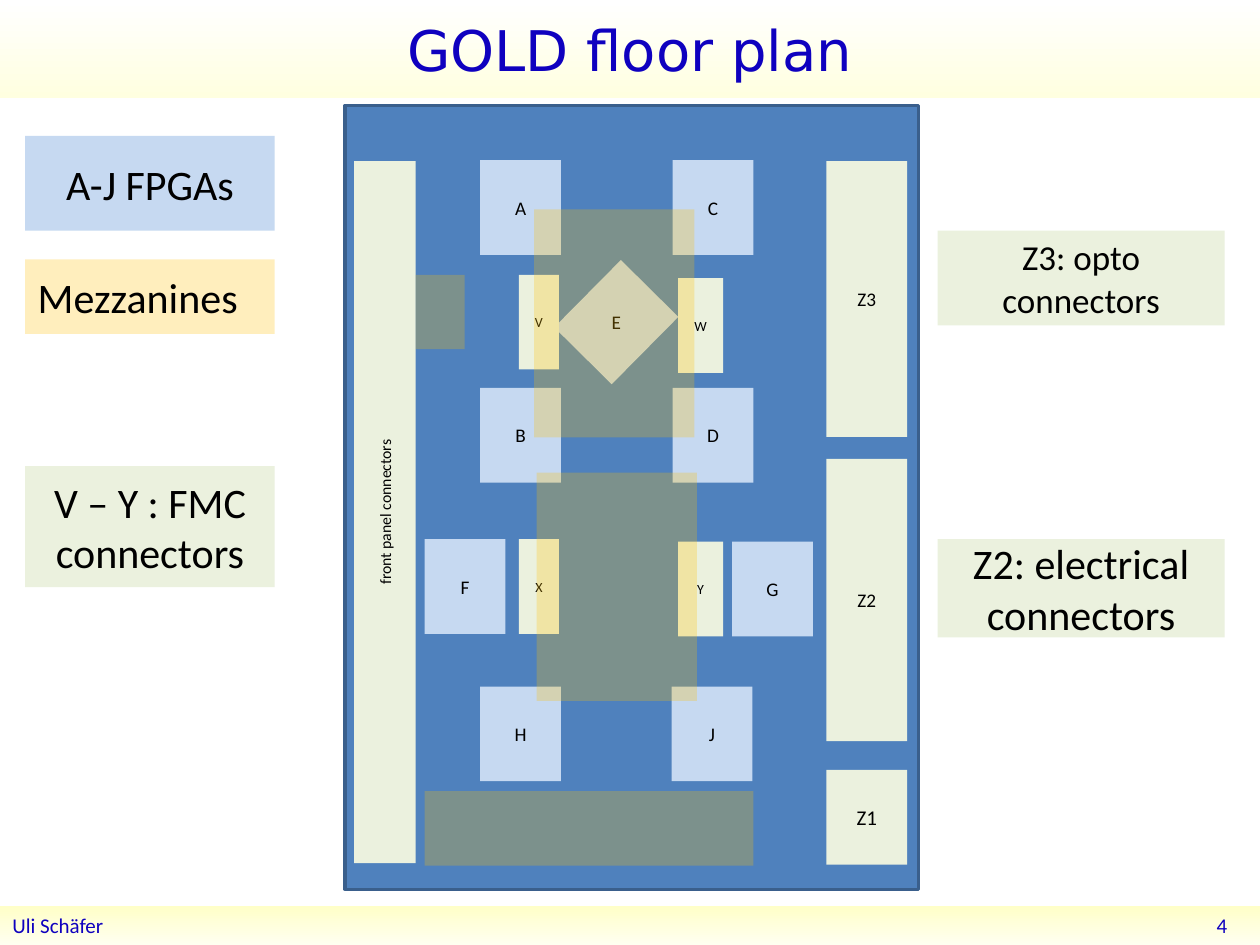
import dataclasses

import pptx
import pptx.dml.color
import pptx.enum.shapes
import pptx.enum.text
import pptx.oxml.ns
import pptx.util
from lxml import etree

Cm = pptx.util.Cm
Pt = pptx.util.Pt
ALIGN = pptx.enum.text.PP_ALIGN
RECTANGLE = pptx.enum.shapes.MSO_SHAPE.RECTANGLE


@dataclasses.dataclass(frozen=True)
class Theme:
    # Colours
    ink: str = "000000"
    heading: str = "0F01BF"
    board: str = "4F81BD"
    board_edge: str = "3A5F8C"
    fpga: str = "C6D9F1"
    connector: str = "EBF1DE"
    mezzanine: str = "FFC000"
    mezzanine_opacity: int = 26
    title_band: tuple = ("FFFFFF", "FFFFE0")
    footer_band: tuple = ("FFFFC8", "FFFFF0")
    # Fonts and sizes in points
    body_font: str = "Calibri"
    title_font: str = "DejaVu Sans"
    title_size: int = 32
    legend_size: int = 24
    small_legend_size: int = 20
    footer_size: int = 12
    part_size: int = 11
    panel_size: int = 9
    socket_size: int = 8


THEME = Theme()
PAGE_WIDTH, PAGE_HEIGHT = 25.4, 19.05
FPGA_WIDTH, PART_HEIGHT = 1.63, 1.91


def rgb(value):
    return pptx.dml.color.RGBColor.from_string(value)


def write(box, text, size, color=THEME.ink, font=THEME.body_font, align=ALIGN.CENTER):
    frame = box.text_frame
    frame.word_wrap = True
    frame.vertical_anchor = pptx.enum.text.MSO_ANCHOR.MIDDLE
    para = frame.paragraphs[0]
    para.text = text
    para.alignment = align
    para.font.size = Pt(size)
    para.font.name = font
    para.font.color.rgb = rgb(color)


def add_block(page, area, fill):
    block = page.shapes.add_shape(RECTANGLE, *map(Cm, area))
    block.shadow.inherit = False
    block.line.fill.background()
    block.fill.solid()
    block.fill.fore_color.rgb = rgb(fill)
    return block


def add_label(page, area, text, size, **style):
    box = page.shapes.add_textbox(*map(Cm, area))
    write(box, text, size, **style)


def add_part(page, area, fill, text, size):
    part = add_block(page, area, fill)
    write(part, text, size)
    return part


def add_mezzanine(page, area):
    block = add_block(page, area, THEME.mezzanine)
    color = block.fill._xPr.find(".//" + pptx.oxml.ns.qn("a:srgbClr"))
    alpha = etree.SubElement(color, pptx.oxml.ns.qn("a:alpha"))
    alpha.set("val", str(THEME.mezzanine_opacity * 1000))
    return block


def add_band(page, area, colors):
    band = add_block(page, area, colors[0])
    band.fill.gradient()
    band.fill.gradient_angle = 270
    for stop, color in zip(band.fill.gradient_stops, colors):
        stop.color.rgb = rgb(color)
    return band


def add_frame(page):
    title = add_band(page, (0, 0, PAGE_WIDTH, 1.98), THEME.title_band)
    write(title, "GOLD floor plan", THEME.title_size, THEME.heading, THEME.title_font)
    footer = add_band(page, (0, 18.26, PAGE_WIDTH, 0.79), THEME.footer_band)
    write(footer, "Uli Schäfer", THEME.footer_size, THEME.heading, align=ALIGN.LEFT)
    add_label(page, (19.63, 18.24, 5.36, 0.81), "4", THEME.footer_size,
              color=THEME.heading, align=ALIGN.RIGHT)


def add_board(page):
    board = add_block(page, (6.96, 2.13, 11.56, 15.8), THEME.board)
    board.line.color.rgb = rgb(THEME.board_edge)
    board.line.width = Pt(2)

    # FPGAs
    for name, left, top in (
        ("A", 9.68, 3.23), ("C", 13.56, 3.23),
        ("B", 9.68, 7.82), ("D", 13.56, 7.82),
        ("F", 8.56, 10.87), ("G", 14.76, 10.92),
        ("H", 9.68, 13.84), ("J", 13.54, 13.84),
    ):
        add_part(page, (left, top, FPGA_WIDTH, PART_HEIGHT), THEME.fpga,
                 name, THEME.part_size)

    # The central FPGA is turned, its letter stays upright
    center = (11.61, 5.54, FPGA_WIDTH, PART_HEIGHT)
    add_block(page, center, THEME.fpga).rotation = 44.7
    add_label(page, center, "E", THEME.part_size)

    # Backplane connectors
    for name, top, height, size in (
        ("Z1", 15.52, PART_HEIGHT, 12),
        ("Z2", 9.25, 5.69, THEME.part_size),
        ("Z3", 3.25, 5.56, THEME.part_size),
    ):
        add_part(page, (16.66, top, FPGA_WIDTH, height), THEME.connector, name, size)

    # FMC connectors
    for name, left, top, width in (
        ("V", 10.46, 5.54, 1.02), ("W", 13.67, 5.61, 0.91),
        ("X", 10.46, 10.87, 1.02), ("Y", 13.67, 10.92, 0.91),
    ):
        width = 0.81 if name in "VX" else width
        add_part(page, (left, top, width, PART_HEIGHT), THEME.connector,
                 name, THEME.socket_size)

    # Front panel
    panel = add_part(page, (7.14, 3.25, 1.24, 14.15), THEME.connector,
                     "front panel connectors", THEME.panel_size)
    panel.text_frame._txBody.bodyPr.set("vert", "vert270")


def add_legend(page):
    mezzanine = add_mezzanine(page, (0.51, 5.23, 5.03, 1.5))
    write(mezzanine, "Mezzanines", THEME.legend_size, align=ALIGN.LEFT)
    for area, fill, text, size in (
        ((0.51, 2.74, 5.03, 1.91), THEME.fpga, "A-J FPGAs", THEME.legend_size),
        ((18.9, 4.65, 5.79, 1.91), THEME.connector, "Z3: opto connectors",
         THEME.small_legend_size),
        ((18.9, 10.87, 5.79, 1.98), THEME.connector, "Z2: electrical connectors",
         THEME.legend_size),
        ((0.51, 9.4, 5.03, 2.44), THEME.connector, "V – Y : FMC connectors",
         THEME.legend_size),
    ):
        add_part(page, area, fill, text, size)


def add_mezzanines(page):
    for area in (
        (8.38, 5.54, 0.99, 1.5),
        (10.77, 4.22, 3.23, 4.6),
        (10.82, 9.53, 3.23, 4.6),
        (8.56, 15.95, 6.63, 1.5),
    ):
        add_mezzanine(page, area)


def main():
    deck = pptx.Presentation()
    deck.slide_width, deck.slide_height = Cm(PAGE_WIDTH), Cm(PAGE_HEIGHT)
    page = deck.slides.add_slide(deck.slide_layouts[6])
    add_frame(page)
    add_board(page)
    add_legend(page)
    add_mezzanines(page)
    deck.save("out.pptx")


if __name__ == "__main__":
    main()
